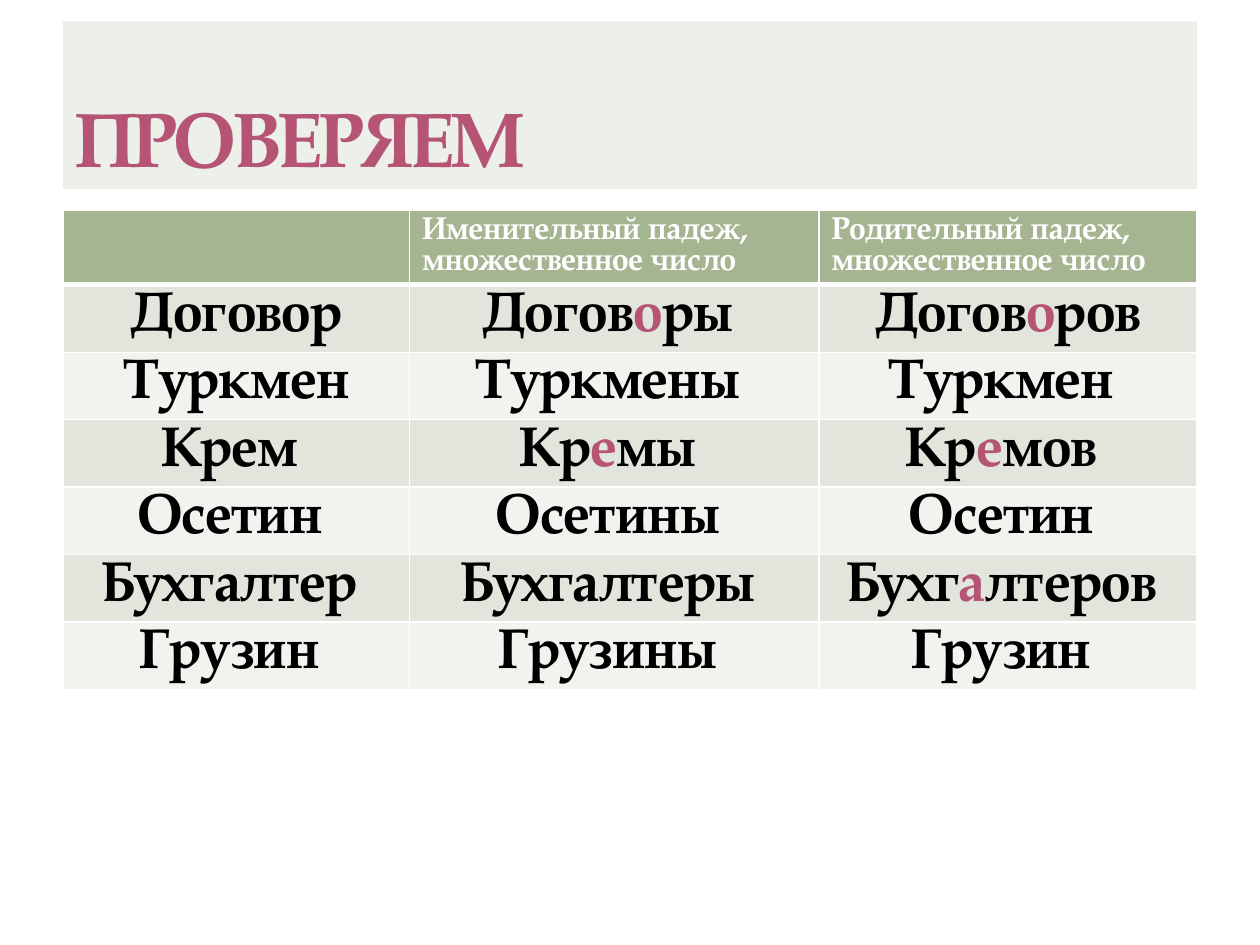
from lxml import etree
from pptx import Presentation
from pptx.dml.color import RGBColor
from pptx.enum.shapes import MSO_SHAPE
from pptx.enum.text import MSO_ANCHOR, PP_ALIGN
from pptx.oxml import parse_xml
from pptx.oxml.ns import nsdecls, qn
from pptx.util import Inches, Pt

RECT = MSO_SHAPE.RECTANGLE
BOTTOM = MSO_ANCHOR.BOTTOM
LEFT, CENTER = PP_ALIGN.LEFT, PP_ALIGN.CENTER
FONT = "TeX Gyre Pagella"
WHITE, BLACK, ACCENT = "FFFFFF", "000000", "B55475"
HEADER, BANDS = "A5B592", ("E1E5DC", "F0F3EE")

HEADINGS = ("", "Именительный падеж, множественное число",
            "Родительный падеж, множественное число")
WORDS = (
    ("Договор", "Догов|о|ры ", "Догов|о|ров"),
    ("Туркмен", "Туркмены ", "Туркмен "),
    ("Крем ", "Кр|е|мы ", "Кр|е|мов "),
    ("Осетин ", "Осетины ", "Осетин "),
    ("Бухгалтер ", "Бухгалтеры ", "Бухг|а|лтеров "),
    ("Грузин ", "Грузины ", "Грузин "),
)


def rgb(value):
    return RGBColor.from_string(value)


class Deck:
    """Holds the style and the current slide; text between bars is accented."""

    def __init__(self):
        self.prs = Presentation()
        self.prs.slide_width, self.prs.slide_height = Inches(10), Inches(7.5)
        self.s = self.prs.slides.add_slide(self.prs.slide_layouts[6])

    def text(self, tf, text, size, color, align):
        p = tf.paragraphs[0]
        p.alignment = align
        p.font.name, p.font.size, p.font.bold = FONT, Pt(size), True
        for i, part in enumerate(text.split("|")):
            r = p.add_run()
            r.text = part
            r.font.color.rgb = rgb(ACCENT if i % 2 else color)
        return p

    def title(self, text, x, y, w, h):
        sp = self.s.shapes.add_shape(RECT, Inches(x), Inches(y), Inches(w), Inches(h))
        sp.shadow.inherit = False
        sp.fill.solid()
        sp.fill.fore_color.rgb = rgb("EDF0E9")
        sp.line.fill.background()
        tf = sp.text_frame
        tf.word_wrap, tf.vertical_anchor = True, BOTTOM
        p = self.text(tf, text, 44, ACCENT, LEFT)
        rPr = p.runs[0].font._element
        rPr.set("spc", "-100")
        rPr.insert(0, parse_xml(
            f'<a:ln {nsdecls("a")} w="{Pt(0.25)}"><a:solidFill><a:srgbClr val="E0DDB1">'
            '<a:alpha val="25000"/></a:srgbClr></a:solidFill></a:ln>'))

    def cell(self, cell, text, size, color, fill, align, bottom=1):
        cell.fill.solid()
        cell.fill.fore_color.rgb = rgb(fill)
        if text:
            self.text(cell.text_frame, text, size, color, align)
        tcPr = cell._tc.get_or_add_tcPr()
        for i, (side, width) in enumerate(zip("LRTB", (1, 1, 1, bottom))):
            ln = etree.Element(qn(f"a:ln{side}"), w=str(Pt(width)))
            paint = etree.SubElement(ln, qn("a:solidFill"))
            etree.SubElement(paint, qn("a:srgbClr"), val=WHITE)
            tcPr.insert(i, ln)

    def table(self, headings, rows, x, y, widths, row_height):
        count = len(rows) + 1
        table = self.s.shapes.add_table(
            count, len(widths), Inches(x), Inches(y),
            Inches(sum(widths)), Inches(row_height * count)).table
        for column, width in zip(table.columns, widths):
            column.width = Inches(width)
        for c, text in enumerate(headings):
            self.cell(table.cell(0, c), text, 18, WHITE, HEADER, LEFT, bottom=3)
        for r, row in enumerate(rows, 1):
            for c, text in enumerate(row):
                self.cell(table.cell(r, c), text, 32, BLACK, BANDS[(r - 1) % 2], CENTER)


def main():
    deck = Deck()
    deck.table(HEADINGS, WORDS, 0.5, 1.67, (2.75, 3.25, 3), 0.41)
    deck.title("ПРОВЕРЯЕМ", 0.5, 0.17, 9, 1.33)
    deck.prs.save("out.pptx")


if __name__ == "__main__":
    main()
